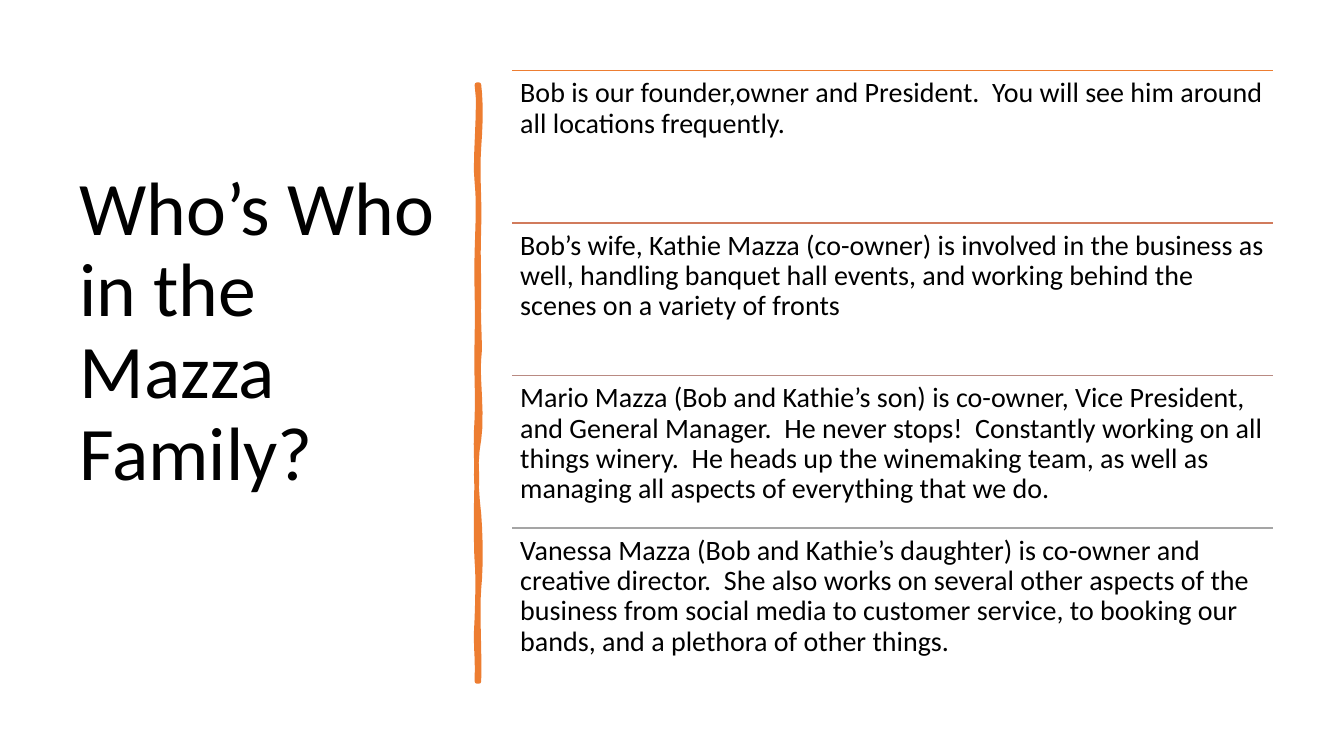
"""Build the family introduction slide with a title, a brush divider and four ruled entries."""
from dataclasses import dataclass

from lxml import etree
from pptx import Presentation
from pptx.dml.color import RGBColor
from pptx.enum import shapes, text
from pptx.oxml import ns
from pptx.util import Inches, Pt

FONT = "Calibri"
BLACK = "000000"
ORANGE = "ED7D31"
LIST_LEFT, LIST_TOP, LIST_WIDTH = 5.08, 0.7, 7.55
ROW_HEIGHT = 4.54 / 3
CURVE_STEPS = 6


@dataclass
class Entry:
    words: str
    rule_color: str


@dataclass
class Insets:
    left: float
    top: float
    right: float
    bottom: float


ENTRIES = [
    Entry("Bob is our founder,owner and President.  You will see him around "
          "all locations frequently.", ORANGE),
    Entry("Bob’s wife, Kathie Mazza (co-owner) is involved in the business as well, "
          "handling banquet hall events, and working behind the scenes on a variety "
          "of fronts", "D17B5C"),
    Entry("Mario Mazza (Bob and Kathie’s son) is co-owner, Vice President, and General "
          "Manager.  He never stops!  Constantly working on all things winery.  He heads "
          "up the winemaking team, as well as managing all aspects of everything that "
          "we do.", "B98A82"),
    Entry("Vanessa Mazza (Bob and Kathie’s daughter) is co-owner and creative director.  "
          "She also works on several other aspects of the business from social media to "
          "customer service, to booking our bands, and a plethora of other things.",
          "A5A5A5"),
]

BRUSH_START = (4.75, 0.84)
BRUSH_CURVES = [
    ((4.77, 1.02), (4.77, 1.19), (4.75, 1.46)),
    ((4.73, 1.73), (4.76, 1.95), (4.75, 2.26)),
    ((4.74, 2.57), (4.75, 2.62), (4.75, 2.94)),
    ((4.74, 3.25), (4.77, 3.42), (4.75, 3.56)),
    ((4.73, 3.7), (4.79, 4.14), (4.75, 4.36)),
    ((4.71, 4.57), (4.72, 4.84), (4.75, 5.1)),
    ((4.77, 5.36), (4.77, 5.64), (4.75, 5.84)),
    ((4.73, 6.03), (4.76, 6.5), (4.75, 6.76)),
    ((4.74, 6.76), (4.73, 6.76), (4.73, 6.76)),
    ((4.74, 6.46), (4.71, 6.44), (4.73, 6.13)),
    ((4.74, 5.83), (4.74, 5.7), (4.73, 5.57)),
    ((4.72, 5.44), (4.72, 4.95), (4.73, 4.77)),
    ((4.73, 4.59), (4.71, 4.45), (4.73, 4.15)),
    ((4.74, 3.86), (4.72, 3.73), (4.73, 3.35)),
    ((4.74, 2.98), (4.72, 2.81), (4.73, 2.5)),
    ((4.74, 2.18), (4.75, 2), (4.73, 1.81)),
    ((4.7, 1.63), (4.77, 1.04), (4.73, 0.84)),
]


def rgb(color: str) -> RGBColor:
    return RGBColor.from_string(color)


def add_text(s, words: str, left: float, top: float, width: float, height: float,
             size: float, insets: Insets, anchor) -> None:
    tf = s.shapes.add_textbox(Inches(left), Inches(top), Inches(width), Inches(height)).text_frame
    tf.word_wrap = True
    tf.vertical_anchor = anchor
    tf.margin_left, tf.margin_top = Inches(insets.left), Inches(insets.top)
    tf.margin_right, tf.margin_bottom = Inches(insets.right), Inches(insets.bottom)
    p = tf.paragraphs[0]
    p.text = words
    p.line_spacing = 0.9
    p.font.name, p.font.size = FONT, Pt(size)
    p.font.color.rgb = rgb(BLACK)


def add_rule(s, y: float, color: str) -> None:
    line = s.shapes.add_connector(shapes.MSO_CONNECTOR.STRAIGHT, Inches(LIST_LEFT), Inches(y),
                                  Inches(LIST_LEFT + LIST_WIDTH), Inches(y))
    line.line.color.rgb = rgb(color)
    line.line.width = Pt(1)
    etree.SubElement(line._element.spPr, ns.qn("a:effectLst"))


def add_brush(s) -> None:
    points, start = [], BRUSH_START
    for first, second, end in BRUSH_CURVES:
        for step in range(1, CURVE_STEPS + 1):
            t = step / CURVE_STEPS
            u = 1 - t
            points.append(tuple(
                Inches(u**3 * a + 3 * u * u * t * b + 3 * u * t * t * c + t**3 * d)
                for a, b, c, d in zip(start, first, second, end)))
        start = end
    x, y = BRUSH_START
    builder = s.shapes.build_freeform(Inches(x), Inches(y))
    builder.add_line_segments(points, close=True)
    sp = builder.convert_to_shape()
    sp.shadow.inherit = False
    sp.fill.solid()
    sp.fill.fore_color.rgb = rgb(ORANGE)
    sp.line.color.rgb = rgb(ORANGE)
    sp.line.width = Pt(3.25)


def main() -> None:
    prs = Presentation()
    prs.slide_width, prs.slide_height = Inches(13.33), Inches(7.5)
    s = prs.slides.add_slide(prs.slide_layouts[6])
    add_text(s, "Who’s Who in the Mazza Family?", 0.69, 0.7, 3.74, 6.11, 54,
             Insets(0.1, 0.05, 0.1, 0.95), text.MSO_ANCHOR.MIDDLE)
    add_brush(s)
    for i, entry in enumerate(ENTRIES):
        top = LIST_TOP + i * ROW_HEIGHT
        add_rule(s, top, entry.rule_color)
        add_text(s, entry.words, LIST_LEFT, top, LIST_WIDTH, ROW_HEIGHT, 20,
                 Insets(0.08, 0.08, 0.08, 0.08), text.MSO_ANCHOR.TOP)
    prs.save("out.pptx")


if __name__ == "__main__":
    main()
